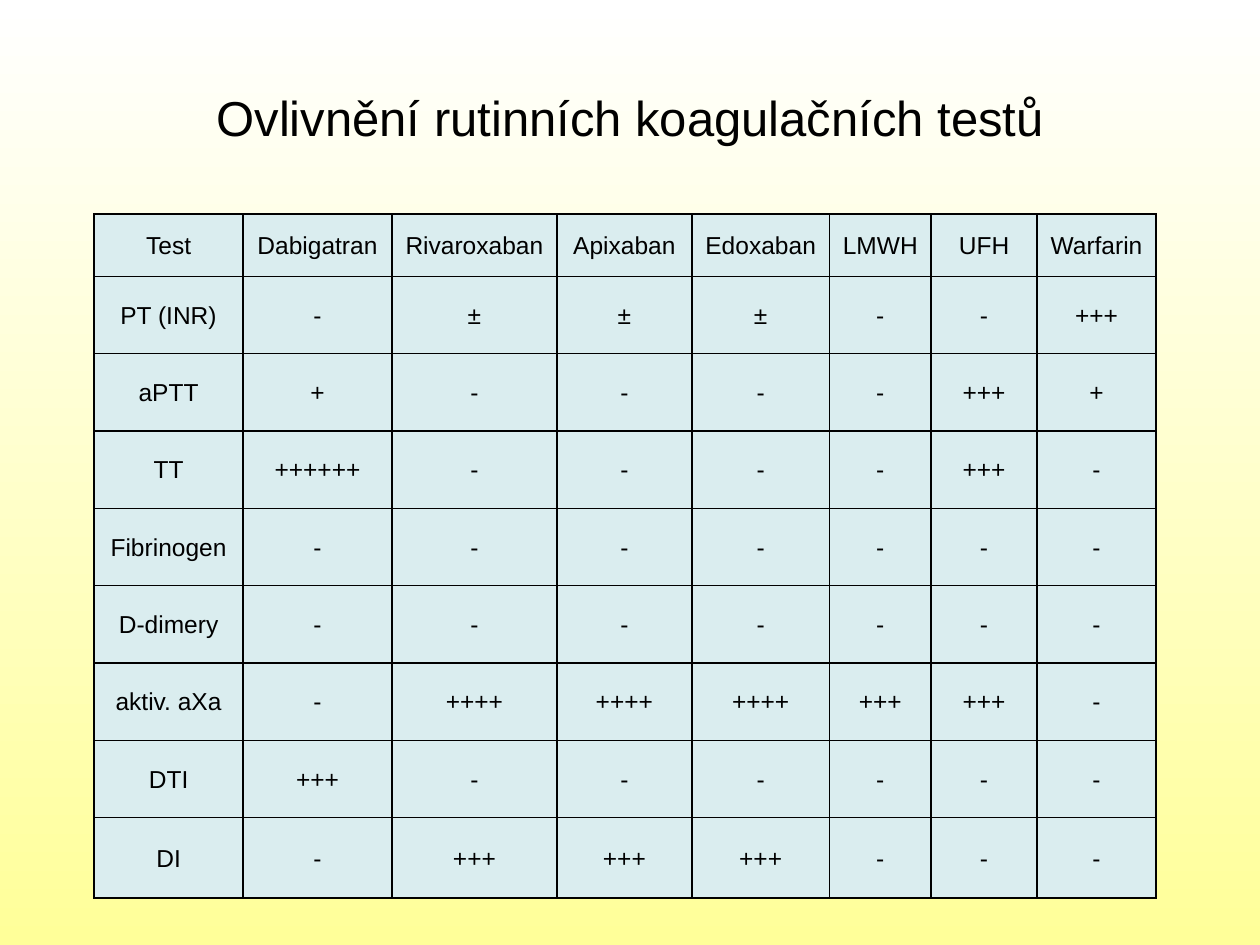
from dataclasses import dataclass

import lxml.etree
import pptx
import pptx.dml.color
import pptx.enum.text
import pptx.oxml.ns
import pptx.util

Pt = pptx.util.Pt
FONT = "Arial"
BLACK = "000000"
CELL_FILL = "DAEDEF"
COLUMN_WIDTHS = [85.1, 85.1, 94.3, 77.1, 78.7, 58, 60.6, 68]
HEADER_HEIGHT, BODY_HEIGHT, LAST_HEIGHT = 35.5, 44.2, 46


@dataclass
class TestRow:
    name: str
    effects: list[str]
    height: float = BODY_HEIGHT


ROWS = [
    TestRow("Test", ["Dabigatran", "Rivaroxaban", "Apixaban", "Edoxaban",
                     "LMWH", "UFH", "Warfarin"], HEADER_HEIGHT),
    TestRow("PT (INR)", ["-", "±", "±", "±", "-", "-", "+++"]),
    TestRow("aPTT", ["+", "-", "-", "-", "-", "+++", "+"]),
    TestRow("TT", ["++++++", "-", "-", "-", "-", "+++", "-"]),
    TestRow("Fibrinogen", ["-"] * 7),
    TestRow("D-dimery", ["-"] * 7),
    TestRow("aktiv. aXa", ["-", "++++", "++++", "++++", "+++", "+++", "-"]),
    TestRow("DTI", ["+++", "-", "-", "-", "-", "-", "-"]),
    TestRow("DI", ["-", "+++", "+++", "+++", "-", "-", "-"], LAST_HEIGHT),
]


def rgb(value: str) -> pptx.dml.color.RGBColor:
    return pptx.dml.color.RGBColor.from_string(value)


def add_text(tf, text: str, size: float) -> None:
    p = tf.paragraphs[0]
    p.alignment = pptx.enum.text.PP_ALIGN.CENTER
    r = p.add_run()
    r.text = text
    r.font.name = FONT
    r.font.size = Pt(size)
    r.font.color.rgb = rgb(BLACK)


def add_borders(cell, color: str, width: float) -> None:
    qn = pptx.oxml.ns.qn
    tc_pr = cell._tc.get_or_add_tcPr()
    for side in ("a:lnL", "a:lnR", "a:lnT", "a:lnB"):
        ln = lxml.etree.SubElement(tc_pr, qn(side), w=str(Pt(width)))
        fill = lxml.etree.SubElement(ln, qn("a:solidFill"))
        lxml.etree.SubElement(fill, qn("a:srgbClr"), val=color)


def fill_cell(cell, text: str) -> None:
    cell.margin_left = cell.margin_right = cell.margin_top = Pt(0.7)
    cell.margin_bottom = Pt(0)
    cell.vertical_anchor = pptx.enum.text.MSO_ANCHOR.MIDDLE
    add_borders(cell, BLACK, 1)
    cell.fill.solid()
    cell.fill.fore_color.rgb = rgb(CELL_FILL)
    add_text(cell.text_frame, text, 14)


def add_background(s) -> None:
    fill = s.background.fill
    fill.gradient()
    fill.gradient_angle = 270
    for stop, color, position in zip(fill.gradient_stops, ("FFFFFF", "FFFF99"), (0, 1)):
        stop.color.rgb = rgb(color)
        stop.position = position


def add_title(s, text: str) -> None:
    sp = s.shapes.add_textbox(Pt(36), Pt(21.6), Pt(648), Pt(90))
    tf = sp.text_frame
    tf.word_wrap = True
    tf.vertical_anchor = pptx.enum.text.MSO_ANCHOR.MIDDLE
    add_text(tf, text, 28)


def add_test_table(s, rows: list[TestRow]) -> None:
    height = sum(row.height for row in rows)
    table = s.shapes.add_table(len(rows), len(COLUMN_WIDTHS), Pt(53.8), Pt(122.4),
                               Pt(sum(COLUMN_WIDTHS)), Pt(height)).table
    table.first_row = False
    table.horz_banding = False
    for column, width in zip(table.columns, COLUMN_WIDTHS):
        column.width = Pt(width)
    for table_row, row in zip(table.rows, rows):
        table_row.height = Pt(row.height)
        for cell, text in zip(table_row.cells, [row.name, *row.effects]):
            fill_cell(cell, text)


def main() -> None:
    prs = pptx.Presentation()
    prs.slide_width, prs.slide_height = Pt(720), Pt(540)
    s = prs.slides.add_slide(prs.slide_layouts[6])
    add_background(s)
    add_title(s, "Ovlivnění rutinních koagulačních testů")
    add_test_table(s, ROWS)
    prs.save("out.pptx")


if __name__ == "__main__":
    main()
